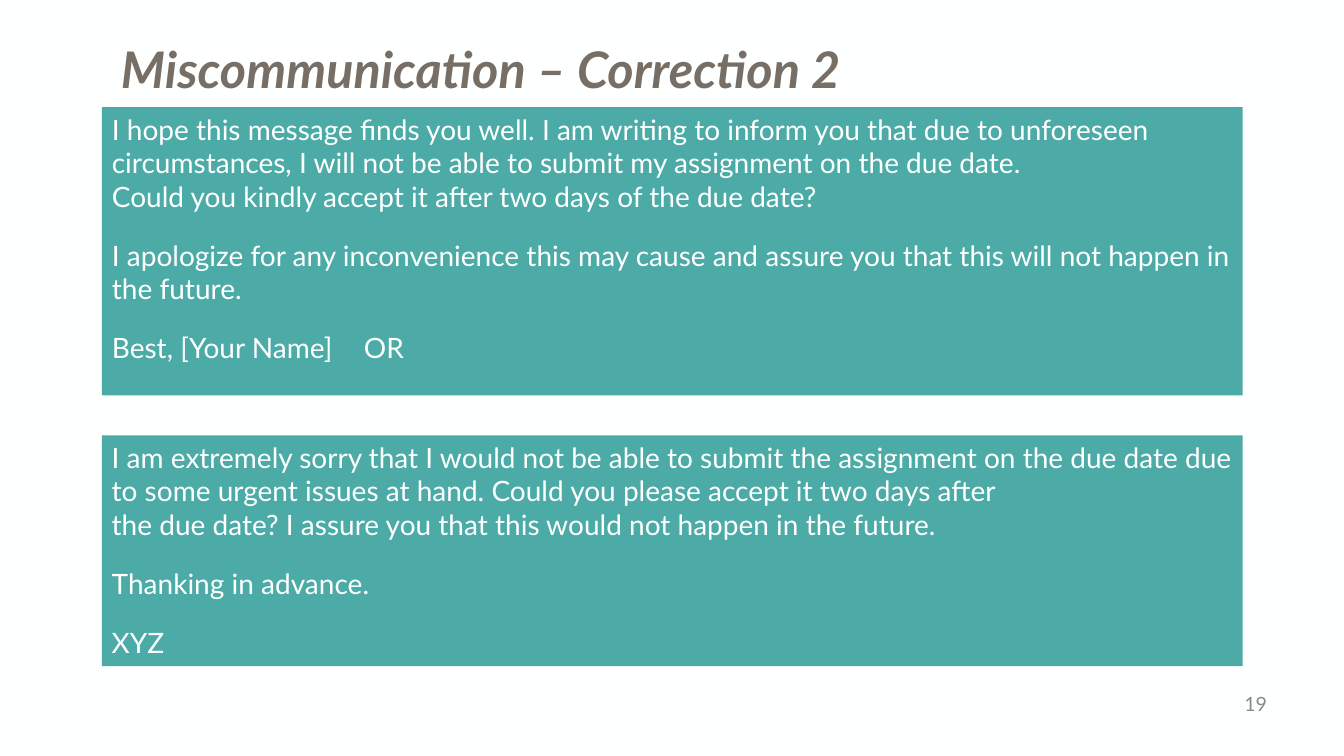
from pptx import Presentation
from pptx import util as u
from pptx.dml.color import RGBColor
from pptx.enum import text as t
from pptx.oxml import parse_xml
from pptx.oxml.ns import nsdecls

WHITE, TEAL, BROWN, GREY = "FEFFFF", "4CABA6", "776E65", "898989"
TAB_STOP = u.Pt(362.5)


def paint(fill, color):
    fill.solid()
    fill.fore_color.rgb = RGBColor.from_string(color)


def write(shape, box, paragraphs, size=20, color=WHITE, emphasis=False, align=t.PP_ALIGN.LEFT,
          anchor=t.MSO_ANCHOR.TOP, line_spacing=1.0, gaps=(0,), tab=None):
    """Place a shape at box (points) and fill it with unbulleted paragraphs."""
    shape.left, shape.top, shape.width, shape.height = [u.Pt(length) for length in box]
    frame = shape.text_frame
    frame.word_wrap = True
    frame.auto_size = t.MSO_AUTO_SIZE.NONE
    frame.vertical_anchor = anchor
    for index, (content, gap) in enumerate(zip(paragraphs, gaps)):
        paragraph = frame.paragraphs[0] if index == 0 else frame.add_paragraph()
        paragraph.text = content
        properties = paragraph._p.get_or_add_pPr()
        properties.set("marL", "0")
        properties.set("indent", "0")
        properties.append(parse_xml(f"<a:buNone {nsdecls('a')}/>"))
        if tab and "\t" in content:
            properties.append(parse_xml(
                f'<a:tabLst {nsdecls("a")}><a:tab pos="{tab}" algn="l"/></a:tabLst>'))
        paragraph.alignment = align
        paragraph.line_spacing = line_spacing
        paragraph.space_before = u.Pt(0)
        paragraph.space_after = u.Pt(gap)
        for run in paragraph.runs:
            run.font.name = "Lato"
            run.font.size = u.Pt(size)
            run.font.bold = run.font.italic = emphasis
            run.font.color.rgb = RGBColor.from_string(color)


presentation = Presentation()
presentation.slide_width, presentation.slide_height = u.Pt(960), u.Pt(540)
slide = presentation.slides.add_slide(presentation.slide_layouts[1])
paint(slide.background.fill, WHITE)

write(slide.shapes.title, (79.2, 28.8, 815, 57.6), ["Miscommunication – Correction 2"],
      size=36, color=BROWN, emphasis=True, line_spacing=0.9)

first_message = slide.placeholders[1]
second_message = slide.shapes.add_textbox(0, 0, 0, 0)
messages = [
    (first_message, 76.5, 205.9, [
        "I hope this message finds you well. I am writing to inform you that due to unforeseen "
        "circumstances, I will not be able to submit my assignment on the due date.\v"
        "Could you kindly accept it after two days of the due date?",
        "I apologize for any inconvenience this may cause and assure you that this will not "
        "happen in the future.",
        "Best, [Your Name]\tOR",
    ]),
    (second_message, 311, 164.9, [
        "I am extremely sorry that I would not be able to submit the assignment on the due date "
        "due to some urgent issues at hand. Could you please accept it two days after\v"
        "the due date? I assure you that this would not happen in the future.",
        "Thanking in advance.",
        "XYZ",
    ]),
]
for shape, top, height, paragraphs in messages:
    paint(shape.fill, TEAL)
    write(shape, (72.7, top, 815, height), paragraphs, gaps=(18, 18, 24), tab=TAB_STOP)

slide_number = slide.shapes.add_textbox(0, 0, 0, 0)
write(slide_number, (864.7, 488.2, 47.5, 28.8), ["19"], size=14, color=GREY,
      align=t.PP_ALIGN.RIGHT, anchor=t.MSO_ANCHOR.MIDDLE)

presentation.save("out.pptx")
